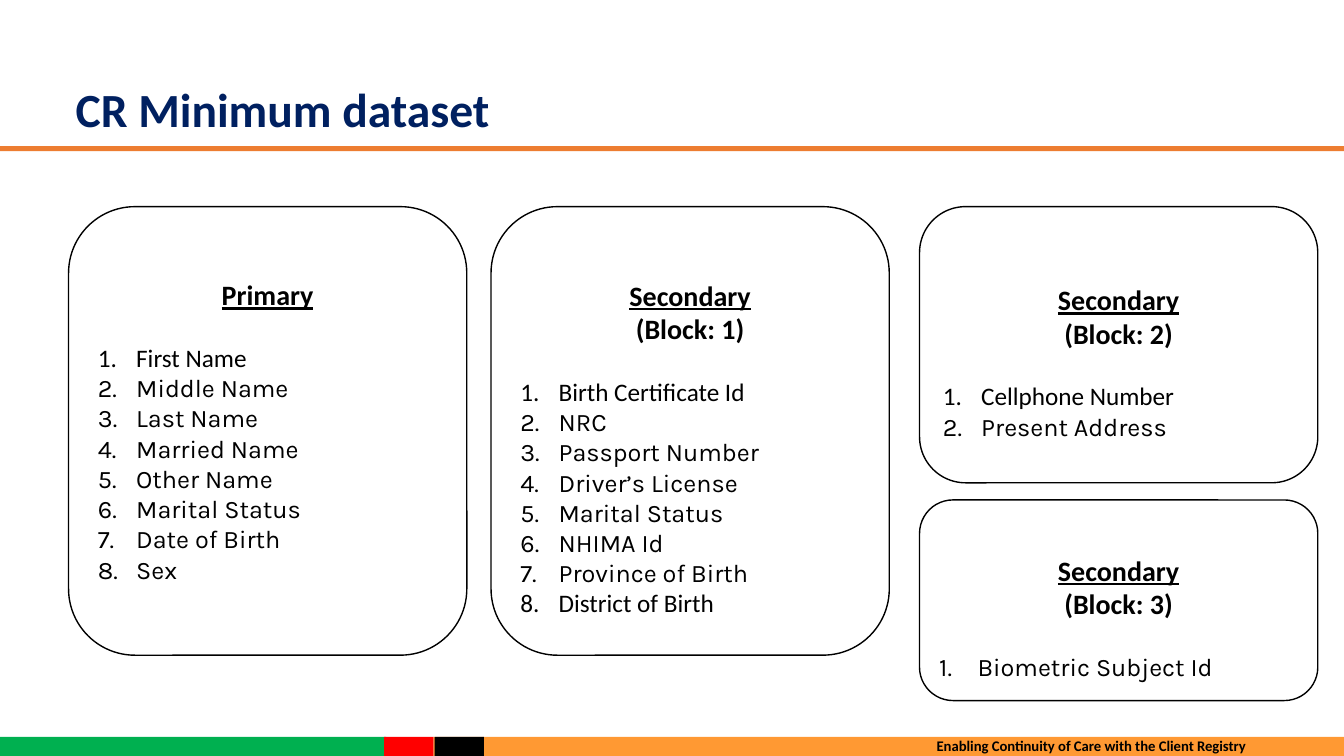
from dataclasses import dataclass

import pptx
import pptx.dml.color
import pptx.enum.shapes
import pptx.enum.text
import pptx.util
from lxml import etree
from pptx.util import Inches, Pt

SHAPES = pptx.enum.shapes.MSO_SHAPE
ALIGN = pptx.enum.text.PP_ALIGN
ANCHOR = pptx.enum.text.MSO_ANCHOR
AUTOFIT = pptx.enum.text.MSO_AUTO_SIZE


@dataclass(frozen=True)
class Theme:
    navy: str = "002060"
    rule: str = "ED7D31"
    green: str = "00B050"
    red: str = "FF0000"
    black: str = "000000"
    orange: str = "FF9933"
    white: str = "FFFFFF"
    main_font: str = "Calibri"
    list_font: str = "Karla"
    title_size: float = 34
    heading_size: float = 20
    list_size: float = 18
    footer_size: float = 10.5


THEME = Theme()
CARD_WIDTH = 3.95
CARD_TOP = 2.05
HEADING_LINE = 24.4
LIST_GAP = 22
MAIN_FONT_FIELDS = {
    "First Name", "Birth Certificate Id", "District of Birth", "Cellphone Number",
}

PRIMARY = ["First Name", "Middle Name", "Last Name", "Married Name",
           "Other Name", "Marital Status", "Date of Birth", "Sex"]
BLOCK_1 = ["Birth Certificate Id", "NRC", "Passport Number", "Driver’s License",
           "Marital Status", "NHIMA Id", "Province of Birth", "District of Birth"]
BLOCK_2 = ["Cellphone Number", "Present Address"]
BLOCK_3 = ["Biometric Subject Id"]

CARDS = [
    (0.68, CARD_TOP, 4.45, "Primary", None, PRIMARY),
    (4.87, CARD_TOP, 4.45, "Secondary", "(Block: 1)", BLOCK_1),
    (9.12, CARD_TOP, 2.74, "Secondary", "(Block: 2)", BLOCK_2),
    (9.12, 4.96, 1.99, "Secondary", "(Block: 3)", BLOCK_3),
]
FLAG_BANDS = [
    (0, 3.83, THEME.green),
    (3.81, 0.49, THEME.red),
    (4.3, 9.03, THEME.orange),
    (4.31, 0.49, THEME.black),
]


def rgb(value):
    return pptx.dml.color.RGBColor.from_string(value)


def add_run(paragraph, text, size, font=THEME.main_font, color=THEME.black,
            bold=True, underline=False):
    run = paragraph.add_run()
    run.text = text
    run.font.size = Pt(size)
    run.font.name = font
    run.font.color.rgb = rgb(color)
    run.font.bold = bold
    run.font.underline = underline


def number_paragraph(paragraph):
    properties = paragraph._p.get_or_add_pPr()
    properties.set("marL", str(Inches(0.38)))
    properties.set("indent", str(-Inches(0.38)))
    numbering = etree.SubElement(properties, pptx.oxml.ns.qn("a:buAutoNum"))
    numbering.set("type", "arabicPeriod")


def add_title(slide, text):
    title = slide.shapes.title
    title.left, title.top = Inches(0.65), Inches(0.63)
    title.width, title.height = Inches(12.68), Inches(0.96)
    frame = title.text_frame
    frame.auto_size = AUTOFIT.NONE
    frame.vertical_anchor = ANCHOR.MIDDLE
    paragraph = frame.paragraphs[0]
    paragraph.alignment = ALIGN.LEFT
    paragraph.line_spacing = 0.9
    add_run(paragraph, text, THEME.title_size, color=THEME.navy)


def add_band(slide, left, top, width, height, color):
    band = slide.shapes.add_shape(SHAPES.RECTANGLE, Inches(left), Inches(top),
                                  Inches(width), Inches(height))
    band.shadow.inherit = False
    band.fill.solid()
    band.fill.fore_color.rgb = rgb(color)
    band.line.fill.background()


def add_footer(slide, text):
    footer = slide.shapes.add_textbox(Inches(8.32), Inches(7.26),
                                      Inches(5.01), Inches(0.28))
    footer.text_frame.word_wrap = True
    paragraph = footer.text_frame.paragraphs[0]
    paragraph.alignment = ALIGN.CENTER
    add_run(paragraph, text, THEME.footer_size)


def add_card(slide, left, top, height, heading, block, fields):
    card = slide.shapes.add_shape(SHAPES.ROUNDED_RECTANGLE, Inches(left), Inches(top),
                                  Inches(CARD_WIDTH), Inches(height))
    card.shadow.inherit = False
    card.fill.solid()
    card.fill.fore_color.rgb = rgb(THEME.white)
    card.line.color.rgb = rgb(THEME.black)
    card.line.width = Pt(1)

    frame = card.text_frame
    frame.word_wrap = True
    frame.vertical_anchor = ANCHOR.MIDDLE
    last_heading = frame.paragraphs[0]
    last_heading.alignment = ALIGN.CENTER
    add_run(last_heading, heading, THEME.heading_size, underline=True)
    if block:
        frame.margin_top = Inches(0.05) + Pt(HEADING_LINE)
        last_heading = frame.add_paragraph()
        last_heading.alignment = ALIGN.CENTER
        add_run(last_heading, block, THEME.heading_size)
    last_heading.space_after = Pt(LIST_GAP)

    for field in fields:
        paragraph = frame.add_paragraph()
        paragraph.alignment = ALIGN.LEFT
        number_paragraph(paragraph)
        font = THEME.main_font if field in MAIN_FONT_FIELDS else THEME.list_font
        add_run(paragraph, field, THEME.list_size, font=font, bold=False)


def main():
    deck = pptx.Presentation()
    deck.slide_width, deck.slide_height = Inches(13.33), Inches(7.5)
    slide = deck.slides.add_slide(deck.slide_layouts[5])
    add_title(slide, "CR Minimum dataset")
    add_band(slide, 0, 1.45, 13.33, 0.05, THEME.rule)
    for left, width, color in FLAG_BANDS:
        add_band(slide, left, 7.31, width, 0.19, color)
    add_footer(slide, "Enabling Continuity of Care with the Client Registry")
    for card in CARDS:
        add_card(slide, *card)
    deck.save("out.pptx")


if __name__ == "__main__":
    main()
